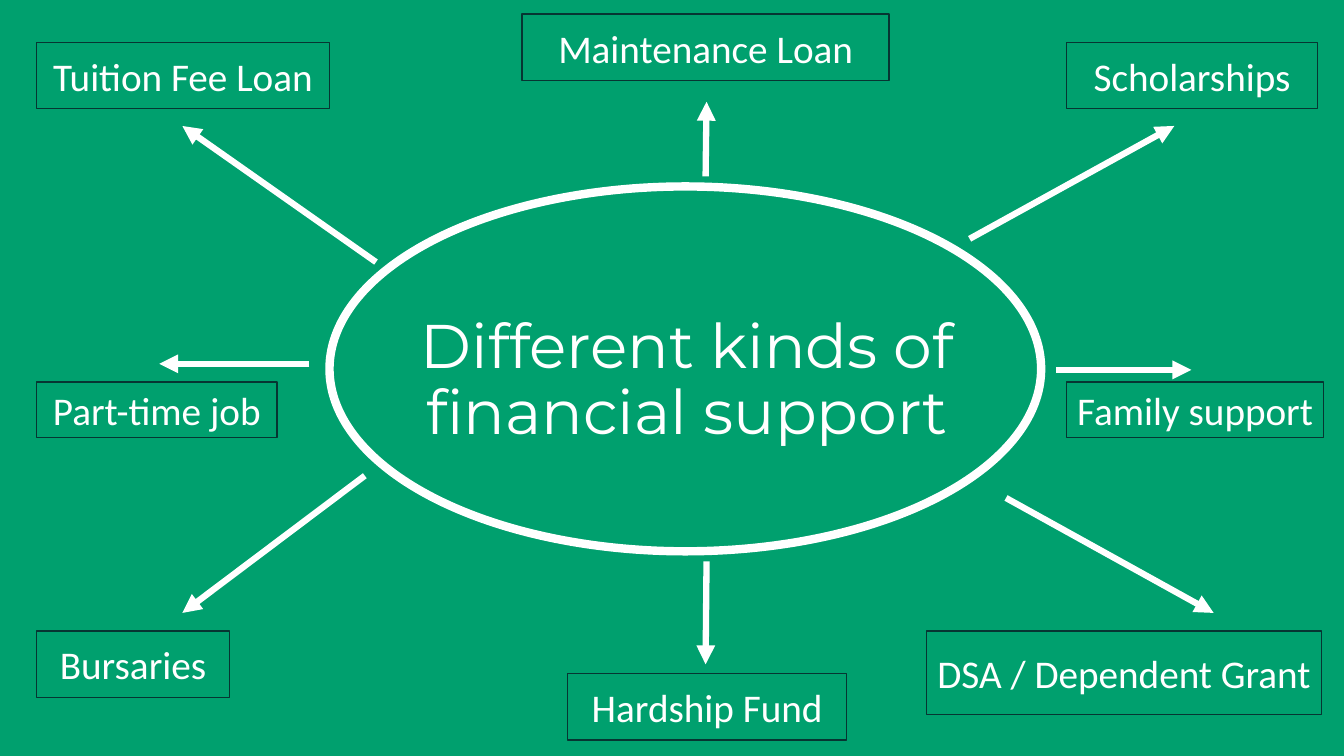
from typing import NamedTuple

from lxml.etree import SubElement
from pptx import Presentation
from pptx.dml.color import RGBColor
from pptx.enum.shapes import MSO_CONNECTOR, MSO_SHAPE
from pptx.enum.text import MSO_ANCHOR, PP_ALIGN
from pptx.oxml.ns import qn
from pptx.util import Pt

GREEN, WHITE, DARK = "00A06E", "FFFFFF", "063532"
LEFT, RIGHT = 25.9, 761.8
TOP, MIDDLE, BOTTOM = 30.2, 272.9, 450.7


class Support(NamedTuple):
    """A kind of support: its box, and the arrow (x1, y1, x2, y2) to it."""
    name: str
    left: float
    top: float
    width: float
    arrow: tuple[float, float, float, float]
    height: float = 47.5


SUPPORTS = [
    Support("Maintenance Loan", 373, 10.1, 262.1, (504, 126, 504.7, 72.7)),
    Support("Tuition Fee Loan", LEFT, TOP, 209.5, (268.6, 187.2, 130.3, 90)),
    Support("Scholarships", RIGHT, TOP, 179.3, (692.6, 170.6, 838.8, 90)),
    Support("Bursaries", LEFT, BOTTOM, 138.2, (260.6, 339.8, 130.3, 437.8)),
    Support("DSA / Dependent Grant", 661.7, BOTTOM, 282.2,
            (718.6, 355.7, 866.9, 437.8), 59.8),
    Support("Hardship Fund", 405.4, 481, 199.4, (504.7, 401, 504, 474.5)),
    Support("Family support", RIGHT, MIDDLE, 183.6,
            (754.6, 264.2, 851, 264.2), 39.6),
    Support("Part-time job", LEFT, MIDDLE, 172.1,
            (221, 259.9, 113.8, 259.9), 39.6),
]


def rgb(value: str) -> RGBColor:
    return RGBColor.from_string(value)


def set_line(sp, color: str, width: float) -> None:
    sp.line.color.rgb = rgb(color)
    sp.line.width = Pt(width)


def write(sp, text: str, *, font: str, size: float, spacing: float = 1.0) -> None:
    """Put white text in the centre of a shape."""
    tf = sp.text_frame
    tf.word_wrap = True
    tf.vertical_anchor = MSO_ANCHOR.MIDDLE
    tf.margin_left = tf.margin_right = Pt(3.6)
    p = tf.paragraphs[0]
    p.alignment = PP_ALIGN.CENTER
    p.line_spacing = spacing
    r = p.add_run()
    r.text = text
    r.font.name = font
    r.font.size = Pt(size)
    r.font.color.rgb = rgb(WHITE)


def add_outline(slide, kind: MSO_SHAPE, left: float, top: float, width: float,
                height: float, *, color: str, line: float):
    """Add an unfilled shape and return it."""
    sp = slide.shapes.add_shape(kind, Pt(left), Pt(top), Pt(width), Pt(height))
    sp.shadow.inherit = False
    sp.fill.background()
    set_line(sp, color, line)
    return sp


def add_arrow(slide, x1: float, y1: float, x2: float, y2: float) -> None:
    sp = slide.shapes.add_connector(
        MSO_CONNECTOR.STRAIGHT, Pt(x1), Pt(y1), Pt(x2), Pt(y2))
    set_line(sp, WHITE, 4.5)
    SubElement(sp.line._get_or_add_ln(), qn("a:tailEnd"), type="triangle")
    SubElement(sp._element.spPr, qn("a:effectLst"))


def add_support(slide, support: Support) -> None:
    add_arrow(slide, *support.arrow)
    sp = add_outline(slide, MSO_SHAPE.RECTANGLE, support.left, support.top,
                     support.width, support.height, color=DARK, line=1)
    write(sp, support.name, font="Calibri", size=28)


def main() -> None:
    prs = Presentation()
    prs.slide_width, prs.slide_height = Pt(960), Pt(540)
    slide = prs.slides.add_slide(prs.slide_layouts[6])
    slide.background.fill.solid()
    slide.background.fill.fore_color.rgb = rgb(GREEN)

    title = slide.shapes.add_textbox(Pt(287.3), Pt(220.3), Pt(407.5), Pt(104.4))
    write(title, "Different kinds of financial support",
          font="Montserrat", size=44, spacing=0.9)
    add_outline(slide, MSO_SHAPE.OVAL, 235.4, 133.2, 508.3, 260.6,
                color=WHITE, line=6)
    for support in SUPPORTS:
        add_support(slide, support)
    prs.save("out.pptx")


if __name__ == "__main__":
    main()
